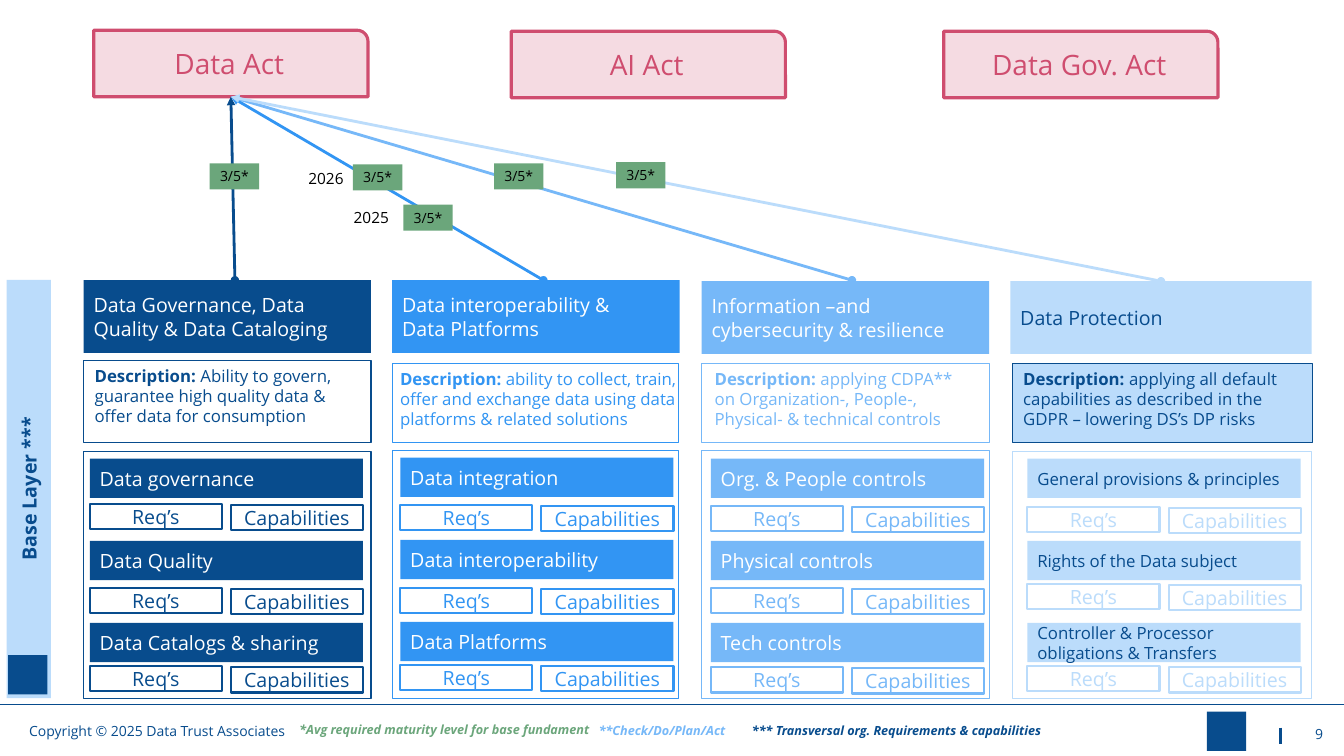
"""Build the slide that maps data regulation onto four base capability columns."""
import dataclasses
import typing

import pptx
import pptx.dml.color
import pptx.enum.shapes
import pptx.enum.text
import pptx.oxml
import pptx.oxml.ns
import pptx.util

Inches = pptx.util.Inches
Align = pptx.enum.text.PP_ALIGN
Anchor = pptx.enum.text.MSO_ANCHOR
Shape = pptx.enum.shapes.MSO_SHAPE
Area = tuple[float, float, float, float]


@dataclasses.dataclass(frozen=True)
class Theme:
    font: str = "Open Sans"
    navy: str = "084C8D"
    blue: str = "3295F3"
    sky: str = "76B8F8"
    pale: str = "BBDCFB"
    white: str = "FFFFFF"
    black: str = "000000"
    green: str = "6BA67B"
    rose: str = "CF4D6F"
    blush: str = "F5DBE2"
    act_size: float = 20
    label_size: float = 14
    body_size: float = 12
    year_size: float = 11
    small_size: float = 10
    note_size: float = 9


THEME = Theme()


@dataclasses.dataclass(frozen=True)
class Column:
    color: str
    header: str
    description: str
    items: tuple[str, ...]
    header_area: Area
    description_area: Area
    panel_area: Area
    text_left: float
    text_width: float
    item_left: float
    item_top: float
    button_tops: tuple[float, ...]
    header_ink: str = THEME.white
    description_ink: str | None = None
    description_fill: str | None = None
    item_size: float = THEME.label_size


@dataclasses.dataclass(frozen=True)
class Label:
    text: str
    left: float
    top: float
    width: float = 0.66
    height: float = 0.25
    color: str = THEME.black
    size: float = THEME.note_size
    emphasis: bool = False


COLUMNS = (
    Column(THEME.navy, "Data Governance, Data Quality & Data Cataloging",
           "Ability to govern, guarantee high quality data & offer data for consumption",
           ("Data governance", "Data Quality", "Data Catalogs & sharing"),
           (0.83, 2.78, 2.85, 0.72), (0.83, 3.58, 2.85, 0.81), (0.83, 4.48, 2.85, 2.45),
           0.84, 2.81, 0.89, 4.55, (5.0, 5.83, 6.61)),
    Column(THEME.blue, "Data interoperability &\nData Platforms",
           "ability to collect, train, offer and exchange data using data platforms & related solutions",
           ("Data integration", "Data interoperability", "Data Platforms"),
           (3.89, 2.78, 2.85, 0.72), (3.89, 3.61, 2.84, 0.78), (3.89, 4.47, 2.84, 2.46),
           3.87, 3.0, 3.97, 4.54, (5.01, 5.83, 6.6)),
    Column(THEME.sky, "Information –and cybersecurity & resilience",
           "applying CDPA** on Organization-, People-, Physical- & technical controls",
           ("Org. & People controls", "Physical controls", "Tech controls"),
           (6.96, 2.79, 2.85, 0.72), (6.96, 3.61, 2.85, 0.78), (6.96, 4.47, 2.85, 2.46),
           6.99, 2.77, 7.05, 4.55, (5.02, 5.83, 6.62)),
    Column(THEME.pale, "Data Protection",
           "applying all default capabilities as described in the GDPR – lowering DS’s DP risks",
           ("General provisions & principles", "Rights of the Data subject",
            "Controller & Processor obligations & Transfers"),
           (10.02, 2.79, 2.99, 0.72), (10.04, 3.61, 2.98, 0.78), (10.04, 4.48, 2.97, 2.45),
           10.05, 3.01, 10.19, 4.55, (5.03, 5.79, 6.61),
           THEME.navy, THEME.navy, THEME.pale, THEME.body_size),
)
ACTS = (("Data Act", 0.93, 0.3), ("AI Act", 5.07, 0.31), ("Data Gov. Act", 9.36, 0.31))
BADGES = ((2.08, 1.62), (3.5, 1.63), (4.9, 1.62), (4.0, 2.03), (6.11, 1.61))
LABELS = (
    Label("2026", 2.96, 1.63, height=0.29, size=THEME.year_size),
    Label("2025", 3.41, 2.02, height=0.29, size=THEME.year_size),
    Label("Copyright © 2025 Data Trust Associates", 0.19, 7.12, 3.59, 0.27, THEME.navy, THEME.small_size),
    Label("*Avg required maturity level for base fundament", 2.87, 7.11, 3.48, color=THEME.green, emphasis=True),
    Label("**Check/Do/Plan/Act", 5.84, 7.12, 1.95, color=THEME.sky, emphasis=True),
    Label("*** Transversal org. Requirements & capabilities", 7.36, 7.12, 4, color=THEME.navy, emphasis=True),
)


def rgb(color: str) -> pptx.dml.color.RGBColor:
    return pptx.dml.color.RGBColor.from_string(color)


def write(box: typing.Any, text: str, *, color: str, size: float = THEME.label_size, lead: str = "",
          bold: bool = False, italic: bool = False, align: Align = Align.LEFT,
          anchor: Anchor = Anchor.MIDDLE) -> None:
    frame = box.text_frame
    frame.word_wrap = True
    frame.vertical_anchor = anchor
    for index, line in enumerate(text.split("\n")):
        para = frame.add_paragraph() if index else frame.paragraphs[0]
        para.alignment = align
        for part, heavy in ((lead, True), (line, bold)):
            if part:
                span = para.add_run()
                span.text = part
                span.font.name = THEME.font
                span.font.size = pptx.util.Pt(size)
                span.font.bold = heavy
                span.font.italic = italic
                span.font.color.rgb = rgb(color)


def add_box(page: typing.Any, area: Area, *, fill: str | None = None, line: str | None = None,
            weight: float = 0.75, kind: Shape = Shape.RECTANGLE) -> typing.Any:
    box = page.shapes.add_shape(kind, *map(Inches, area))
    box.shadow.inherit = False
    if fill:
        box.fill.solid()
        box.fill.fore_color.rgb = rgb(fill)
    else:
        box.fill.background()
    if line:
        box.line.color.rgb = rgb(line)
        box.line.width = pptx.util.Pt(weight)
    else:
        box.line.fill.background()
    return box


def add_text(page: typing.Any, area: Area, text: str, **style: typing.Any) -> None:
    write(page.shapes.add_textbox(*map(Inches, area)), text, **style)


def add_line(page: typing.Any, ends: Area, color: str, weight: float) -> typing.Any:
    line = page.shapes.add_connector(pptx.enum.shapes.MSO_CONNECTOR.STRAIGHT, *map(Inches, ends))
    line.line.color.rgb = rgb(color)
    line.line.width = pptx.util.Pt(weight)
    pptx.oxml.ns.qn("a:effectLst")
    line._element.spPr.append(pptx.oxml.parse_xml(f"<a:effectLst {pptx.oxml.ns.nsdecls('a')}/>"))
    return line


def add_arrow(page: typing.Any, start: float, header: typing.Any, act: typing.Any, color: str) -> None:
    arrow = add_line(page, (start, 2.78, 2.29, 0.96), color, 2)
    if abs(header.left + header.width / 2 - Inches(start)) < Inches(0.02):
        arrow.begin_connect(header, 0)
    arrow.end_connect(act, 2)
    for tag, shape in (("headEnd", "oval"), ("tailEnd", "triangle")):
        arrow.line._get_or_add_ln().append(
            pptx.oxml.parse_xml(f'<a:{tag} {pptx.oxml.ns.nsdecls("a")} type="{shape}"/>'))


def add_column(page: typing.Any, column: Column) -> typing.Any:
    header = add_box(page, column.header_area, fill=column.color)
    write(header, column.header, color=column.header_ink)
    add_box(page, column.description_area, fill=column.description_fill,
            line=column.description_ink or column.color)
    add_text(page, (column.text_left, column.description_area[1], column.text_width, 0.71),
             column.description, lead="Description: ", size=THEME.body_size,
             color=column.description_ink or column.color, anchor=Anchor.TOP)
    add_box(page, column.panel_area, line=column.color)
    for row, (item, button_top) in enumerate(zip(column.items, column.button_tops)):
        bar = add_box(page, (column.item_left, column.item_top + 0.815 * row, 2.71, 0.39), fill=column.color)
        write(bar, item, color=column.header_ink, size=column.item_size)
        for place, caption in enumerate(("Req’s", "Capabilities")):
            area = (column.item_left + 1.4 * place, button_top + 0.01 * place, 1.31, 0.25)
            button = add_box(page, area, fill=THEME.white, line=column.color, weight=1.5)
            write(button, caption, color=column.color, align=Align.CENTER)
    return header


def main() -> None:
    deck = pptx.Presentation()
    deck.slide_width, deck.slide_height = Inches(13.33), Inches(7.5)
    page = deck.slides.add_slide(deck.slide_layouts[6])
    add_line(page, (12.7, 7.22, 12.7, 7.38), THEME.navy, 1.5)
    add_line(page, (0, 6.99, 13.33, 6.99), THEME.navy, 1)
    add_box(page, (11.97, 7.06, 0.39, 0.39), fill=THEME.navy)
    add_text(page, (12.63, 7.08, 0.59, 0.4), "9", color=THEME.navy, size=THEME.small_size, align=Align.RIGHT)
    acts = []
    for name, left, top in ACTS:
        act = add_box(page, (left, top, 2.72, 0.66), fill=THEME.blush, line=THEME.rose, weight=2.25,
                      kind=Shape.ROUND_1_RECTANGLE)
        write(act, name, color=THEME.rose, size=THEME.act_size, align=Align.CENTER)
        acts.append(act)
    for index, column in enumerate(COLUMNS):
        header = add_column(page, column)
        add_arrow(page, 2.33 + 3.06 * index, header, acts[0], column.color)
    for left, top in BADGES:
        badge = add_box(page, (left, top, 0.49, 0.26), fill=THEME.green)
        write(badge, "3/5*", color=THEME.black, size=THEME.small_size, align=Align.CENTER)
    for label in LABELS:
        add_text(page, (label.left, label.top, label.width, label.height), label.text, color=label.color,
                 size=label.size, bold=label.emphasis, italic=label.emphasis, anchor=Anchor.TOP)
    base = add_box(page, (-1.79, 4.63, 4.15, 0.44), fill=THEME.pale)
    base.rotation = 270
    write(base, "Base Layer ***", color=THEME.navy, bold=True, align=Align.CENTER)
    add_box(page, (0.08, 6.5, 0.39, 0.39), fill=THEME.navy)
    deck.save("out.pptx")


if __name__ == "__main__":
    main()
